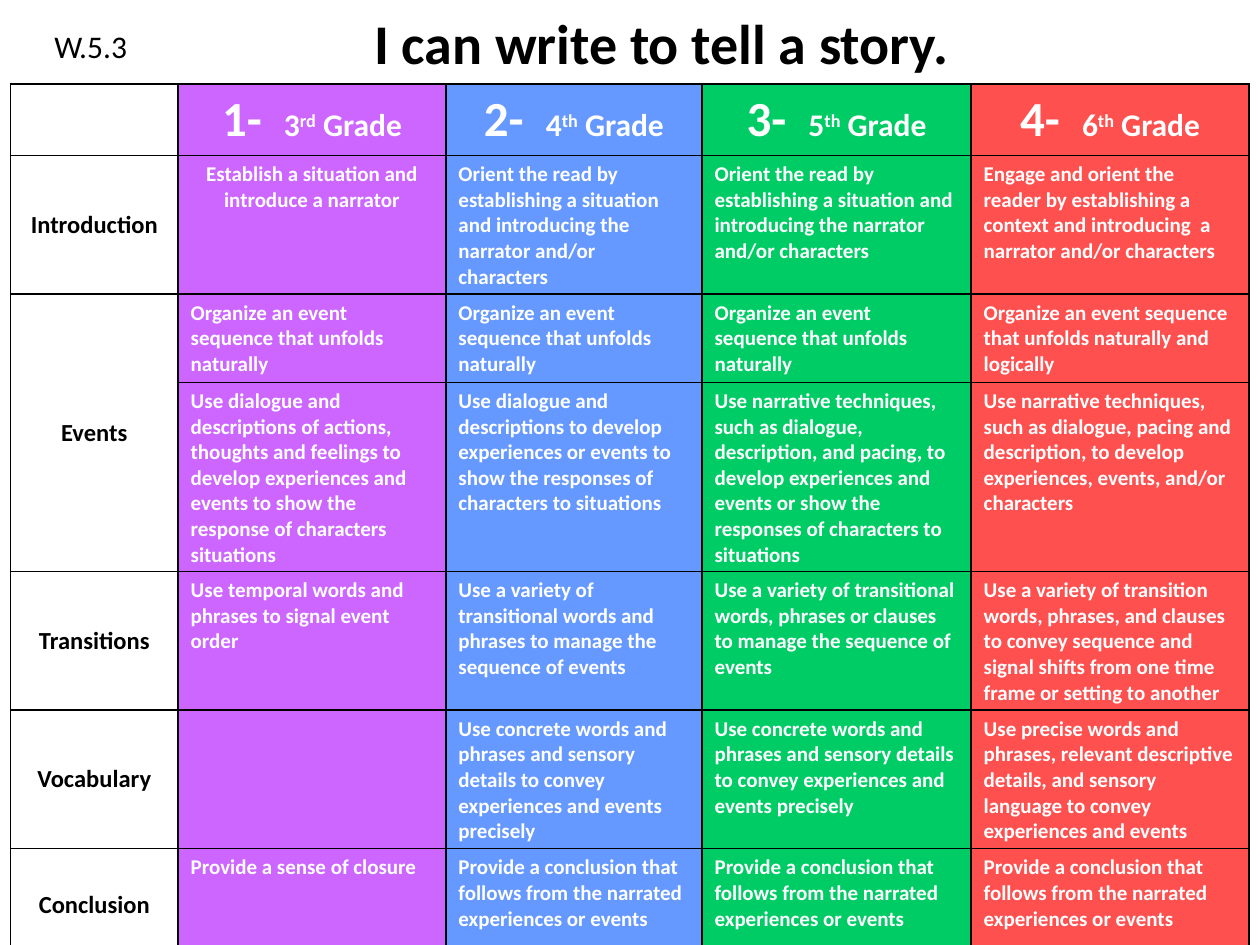
from dataclasses import dataclass

from lxml.etree import SubElement
from pptx import Presentation
from pptx.dml.color import RGBColor as Rgb
from pptx.enum.text import MSO_ANCHOR as Anchor, MSO_AUTO_SIZE as Fit, PP_ALIGN as Align
from pptx.oxml.ns import qn
from pptx.util import Pt

FONT = "Calibri"
HUES = {
    "ink": "000000",
    "paper": "FFFFFF",
    "purple": "CC66FF",
    "blue": "6699FF",
    "green": "00CC66",
    "red": "FF5050",
}
WIDTHS = (95.8, 153, 146.4, 153.8, 158.8)
HEIGHTS = (40.3, 79.2, 50.4, 108, 79.2, 79.2, 64.6)


@dataclass(frozen=True)
class Level:
    score: str
    grade: str
    suffix: str
    hue: str


@dataclass(frozen=True)
class Trait:
    name: str
    goals: tuple[str, ...]
    span: int = 1


LEVELS = (
    Level("1-  ", "3", "rd", "purple"),
    Level("2-  ", "4", "th", "blue"),
    Level("3-  ", "5", "th", "green"),
    Level("4-  ", "6", "th", "red"),
)

ORIENT = ("Orient the read by establishing a situation and introducing "
          "the narrator and/or characters")
ORDER = "Organize an event sequence that unfolds naturally"
WORDS = ("Use concrete words and phrases and sensory details to convey "
         "experiences and events precisely")
CLOSE = "Provide a conclusion that follows from the narrated experiences or events"

# A trait without a name continues the one above it.
TRAITS = (
    Trait("Introduction", (
        "Establish a situation and introduce a narrator",
        ORIENT,
        ORIENT,
        "Engage and orient the reader by establishing a context and "
        "introducing  a narrator and/or characters",
    )),
    Trait("Events", (ORDER, ORDER, ORDER, ORDER + " and logically"), span=2),
    Trait("", (
        "Use dialogue and descriptions of actions, thoughts and feelings to develop "
        "experiences and events to show the response of characters situations",
        "Use dialogue and descriptions to develop experiences or events to show "
        "the responses of characters to situations",
        "Use narrative techniques, such as dialogue, description, and pacing, to develop "
        "experiences and events or show the responses of characters to situations",
        "Use narrative techniques, such as dialogue, pacing and description, "
        "to develop experiences, events, and/or characters",
    )),
    Trait("Transitions", (
        "Use temporal words and phrases to signal event order",
        "Use a variety of transitional words and phrases to manage the sequence of events",
        "Use a variety of transitional words, phrases or clauses "
        "to manage the sequence of events",
        "Use a variety of transition words, phrases, and clauses to convey sequence "
        "and signal shifts from one time frame or setting to another",
    )),
    Trait("Vocabulary", (
        "",
        WORDS,
        WORDS,
        "Use precise words and phrases, relevant descriptive details, and sensory "
        "language to convey experiences and events",
    )),
    Trait("Conclusion", ("Provide a sense of closure", CLOSE, CLOSE, CLOSE)),
)


def style(para, size: float, hue: str, bold: bool = True, align=Align.LEFT) -> None:
    para.alignment = align
    font = para.font
    font.name, font.size, font.bold = FONT, Pt(size), bold
    font.color.rgb = Rgb.from_string(HUES[hue])


def edge(cell) -> None:
    """Draw a thin black line on all four sides of a cell."""
    props = cell._tc.get_or_add_tcPr()
    for side in ("lnL", "lnR", "lnT", "lnB"):
        line = SubElement(props, qn(f"a:{side}"), w=str(Pt(1)))
        fill = SubElement(line, qn("a:solidFill"))
        SubElement(fill, qn("a:srgbClr"), val=HUES["ink"])


def paint(cell, hue: str) -> None:
    cell.fill.solid()
    cell.fill.fore_color.rgb = Rgb.from_string(HUES[hue])


def write(cell, text: str, size: float, hue: str, align=Align.LEFT) -> None:
    para = cell.text_frame.paragraphs[0]
    para.text = text
    style(para, size, hue, align=align)


def head(cell, level: Level) -> None:
    """Write a score and its grade, with a raised suffix."""
    para = cell.text_frame.paragraphs[0]
    style(para, 18, "paper", align=Align.CENTER)
    for text in (level.score, level.grade, level.suffix, " Grade"):
        run = para.add_run()
        run.text = text
        if text == level.score:
            run.font.size = Pt(28)
        elif text == level.suffix:
            run._r.get_or_add_rPr().set("baseline", "30000")


def add_grid(slide) -> None:
    frame = slide.shapes.add_table(len(HEIGHTS), len(WIDTHS), Pt(6), Pt(48),
                                   Pt(sum(WIDTHS)), Pt(sum(HEIGHTS)))
    grid = frame.table
    grid.first_row = grid.horz_banding = False
    for col, width in zip(grid.columns, WIDTHS):
        col.width = Pt(width)
    for row, height in zip(grid.rows, HEIGHTS):
        row.height = Pt(height)
    for cell in grid.iter_cells():
        edge(cell)
        cell.fill.background()

    for c, level in enumerate(LEVELS, 1):
        paint(grid.cell(0, c), level.hue)
        head(grid.cell(0, c), level)

    for r, trait in enumerate(TRAITS, 1):
        if trait.name:
            label = grid.cell(r, 0)
            if trait.span > 1:
                label.merge(grid.cell(r + trait.span - 1, 0))
            label.vertical_anchor = Anchor.MIDDLE
            write(label, trait.name, 14, "ink", Align.CENTER)
        for c, (level, goal) in enumerate(zip(LEVELS, trait.goals), 1):
            cell = grid.cell(r, c)
            paint(cell, level.hue)
            if goal:
                align = Align.CENTER if r == c == 1 else Align.LEFT
                write(cell, goal, 12, "paper", align)


def add_title(slide, text: str) -> None:
    title = slide.shapes.title
    title.left, title.top, title.width, title.height = Pt(72), Pt(0), Pt(612), Pt(48)
    frame = title.text_frame
    frame.text = text
    frame.auto_size = Fit.NONE
    frame.vertical_anchor = Anchor.MIDDLE
    style(frame.paragraphs[0], 32, "ink", align=Align.CENTER)


def add_code(slide, text: str) -> None:
    frame = slide.shapes.add_textbox(Pt(24), Pt(12), Pt(102), Pt(29)).text_frame
    frame.word_wrap = True
    frame.text = text
    style(frame.paragraphs[0], 18, "ink", bold=False)


def main() -> None:
    deck = Presentation()
    deck.slide_width, deck.slide_height = Pt(720), Pt(540)
    slide = deck.slides.add_slide(deck.slide_layouts.get_by_name("Title Only"))
    add_title(slide, "I can write to tell a story.")
    add_code(slide, "W.5.3")
    add_grid(slide)
    deck.save("out.pptx")


if __name__ == "__main__":
    main()
